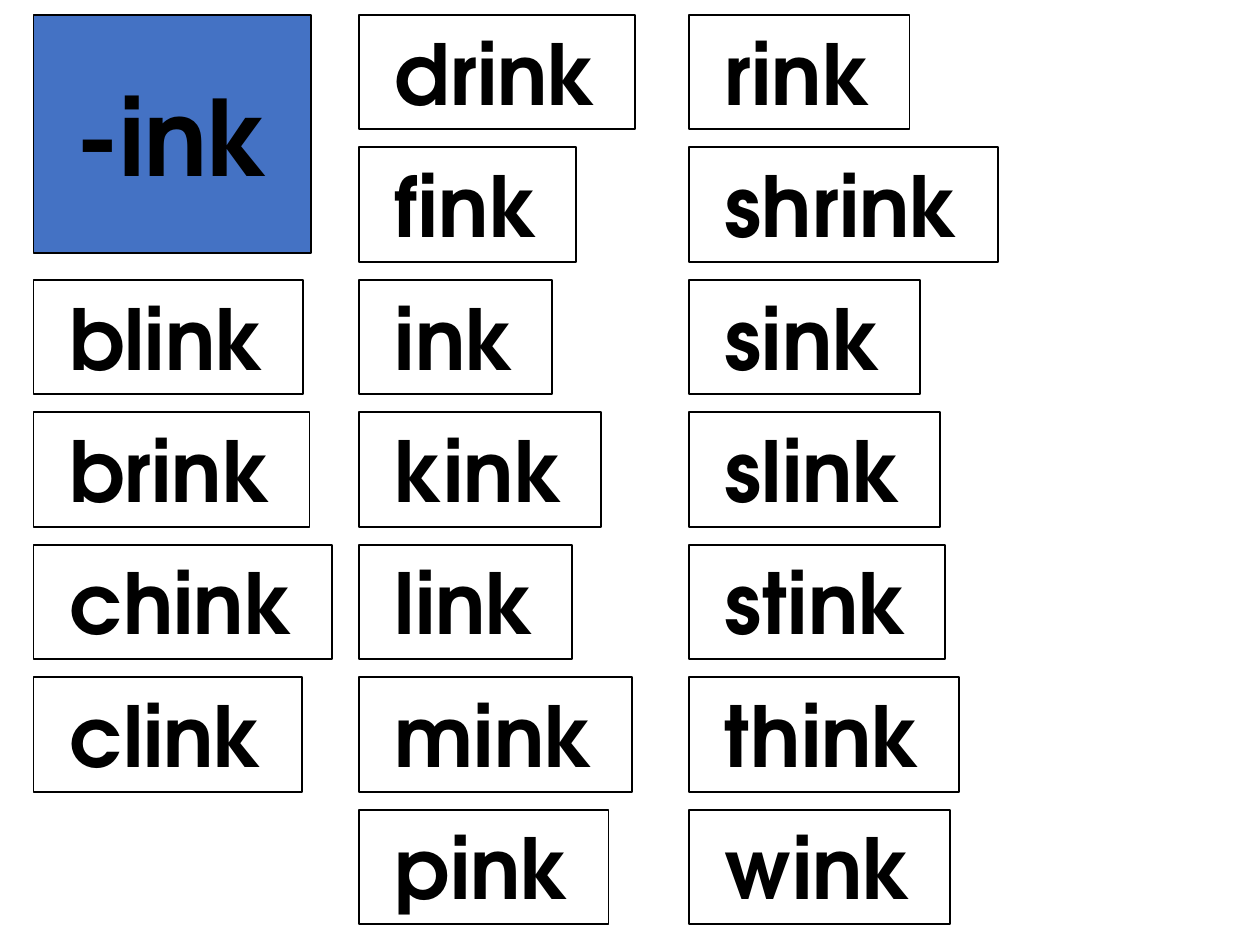
from pptx import Presentation
from pptx.dml.color import RGBColor
from pptx.enum.shapes import MSO_SHAPE
from pptx.enum.text import MSO_ANCHOR, MSO_AUTO_SIZE, PP_ALIGN
from pptx.util import Pt

COLORS = {"header": "4472C4", "card": "FFFFFF", "ink": "000000"}
FONT = "TeX Gyre Adventor"

HEADER = "-ink"
# Each column: left edge, first row, (word, card width) from top to bottom
COLUMNS = [
    (393.8, 0, [("rink", 126), ("shrink", 176.4), ("sink", 131.8), ("slink", 143.3),
                ("stink", 146.2), ("think", 154.1), ("wink", 149)]),
    (205.2, 0, [("drink", 157.7), ("fink", 123.8), ("ink", 110.2), ("kink", 138.2),
                ("link", 121.7), ("mink", 156.2), ("pink", 142.6)]),
    (19.2, 2, [("blink", 154.1), ("brink", 157.7), ("chink", 170.6), ("clink", 153.4)]),
]
TOP, ROW_PITCH, CARD_HEIGHT = 8.5, 75.7, 65.4
HEADER_LEFT, HEADER_WIDTH, HEADER_HEIGHT = 19.2, 158.4, 136.1
WORD_INDENT = 20.5


def add_card(slide, text, left, top, width, height, fill, size):
    card = slide.shapes.add_shape(MSO_SHAPE.RECTANGLE, Pt(left), Pt(top), Pt(width), Pt(height))
    card.shadow.inherit = False
    card.fill.solid()
    card.fill.fore_color.rgb = RGBColor.from_string(COLORS[fill])
    card.line.color.rgb = RGBColor.from_string(COLORS["ink"])
    card.line.width = Pt(1)
    card.text_frame.text = text
    font = card.text_frame.paragraphs[0].runs[0].font
    font.name, font.size, font.bold = FONT, Pt(size), True
    font.color.rgb = RGBColor.from_string(COLORS["ink"])
    return card.text_frame


def main():
    deck = Presentation()
    deck.slide_width, deck.slide_height = Pt(720), Pt(540)
    slide = deck.slides.add_slide(deck.slide_layouts[6])

    for left, first_row, words in COLUMNS:
        for row, (word, width) in enumerate(words, first_row):
            frame = add_card(slide, word, left, TOP + row * ROW_PITCH, width, CARD_HEIGHT,
                             "card", 48)
            frame.margin_left = Pt(WORD_INDENT)
            frame.word_wrap = False
            frame.auto_size = MSO_AUTO_SIZE.SHAPE_TO_FIT_TEXT
            frame.vertical_anchor = MSO_ANCHOR.TOP
            frame.paragraphs[0].alignment = PP_ALIGN.LEFT

    frame = add_card(slide, HEADER, HEADER_LEFT, TOP, HEADER_WIDTH, HEADER_HEIGHT, "header", 60)
    frame.word_wrap = True
    frame.vertical_anchor = MSO_ANCHOR.MIDDLE
    frame.paragraphs[0].alignment = PP_ALIGN.CENTER

    deck.save("out.pptx")


if __name__ == "__main__":
    main()
